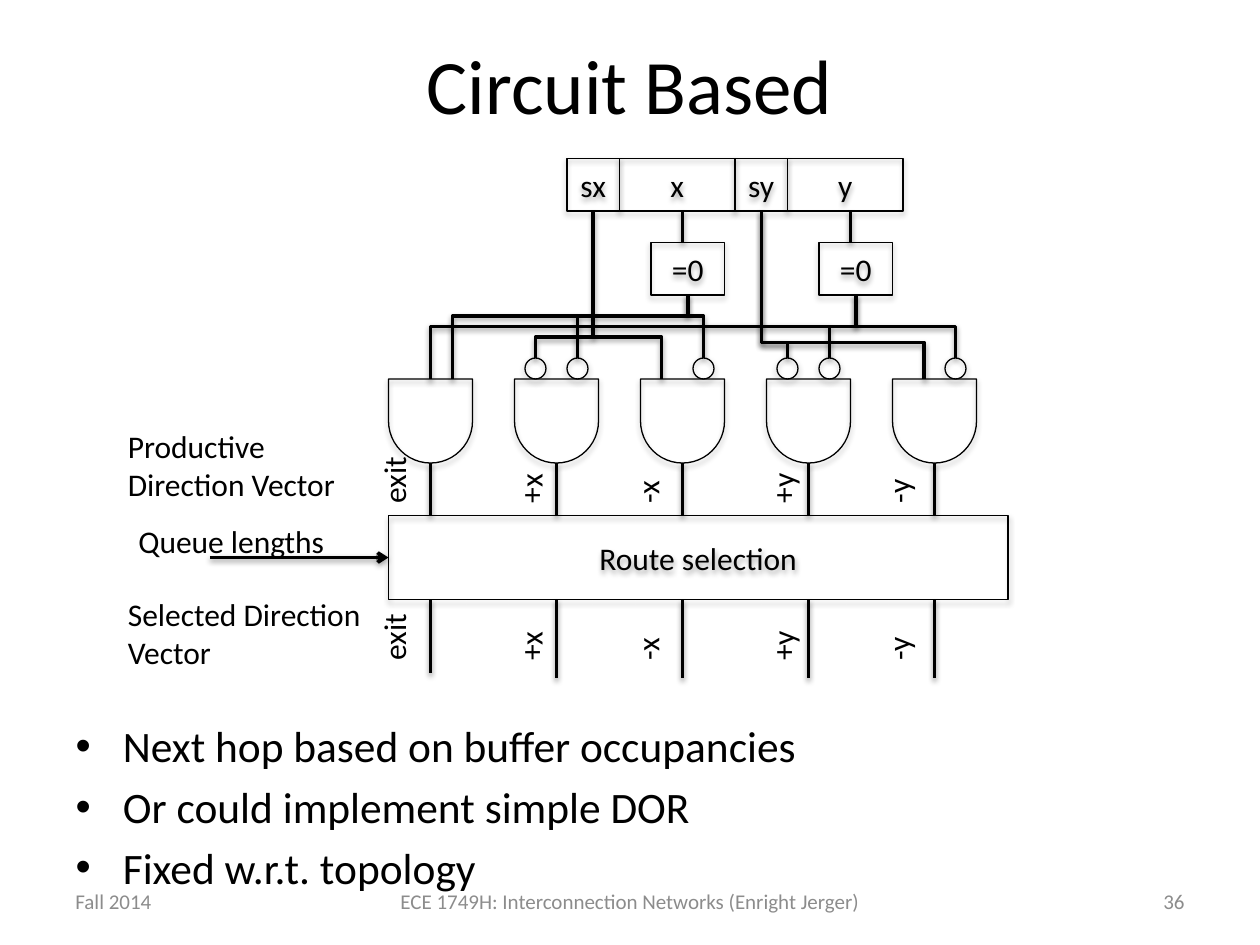
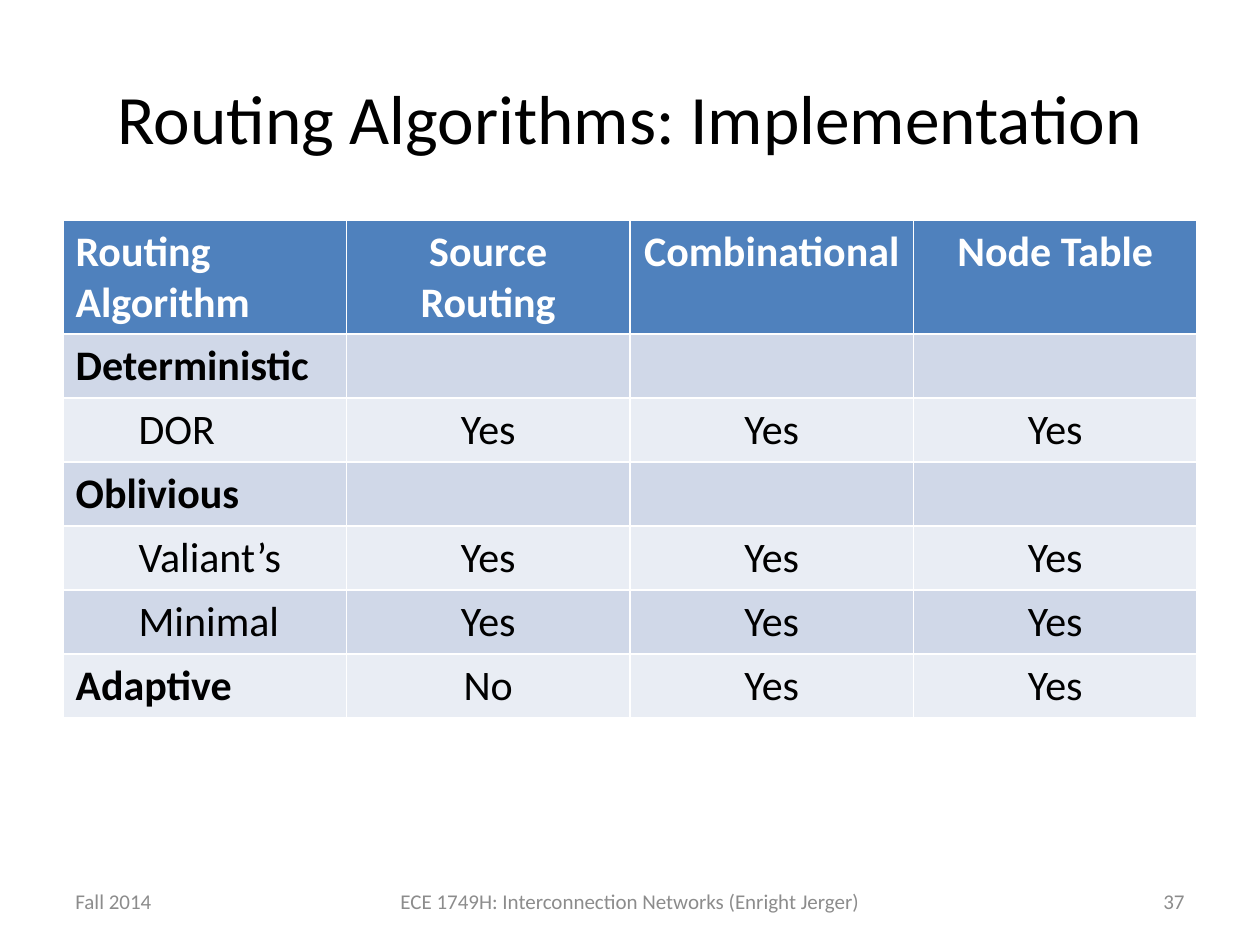
"""Builds two lecture slides on routing: a selection circuit and an implementation table."""
from lxml.etree import SubElement
from pptx import Presentation
from pptx.dml.color import RGBColor
from pptx.enum.shapes import MSO_CONNECTOR as Wire, MSO_SHAPE as Shape
from pptx.enum.text import MSO_ANCHOR as Anchor, MSO_AUTO_SIZE as AutoSize, PP_ALIGN as Align
from pptx.oxml.ns import qn
from pptx.util import Emu, Pt

PX = 7620
FONT = "Calibri"
BLACK = RGBColor(0x00, 0x00, 0x00)
WHITE = RGBColor(0xFF, 0xFF, 0xFF)
GREY = RGBColor(0x8C, 0x8C, 0x8C)
HEADER_BLUE = RGBColor(0x4F, 0x81, 0xBD)
BAND_DARK = RGBColor(0xD0, 0xD8, 0xE8)
BAND_LIGHT = RGBColor(0xE9, 0xED, 0xF4)
TITLE_AND_BODY, TITLE_ONLY = 1, 5


def px(*lengths):
    return [Emu(round(length * PX)) for length in lengths]


class Deck:
    """Holds the lecture style and the slide being drawn."""

    def __init__(self):
        self.presentation = Presentation()
        self.presentation.slide_width, self.presentation.slide_height = px(1200, 900)

    def new_slide(self, layout, title, number, top, size):
        self.slide = self.presentation.slides.add_slide(self.presentation.slide_layouts[layout])
        self.fill_placeholder(0, [title], (60, top, 1080, 150), size)
        for text, left, width, align in (
            ("Fall 2014", 60, 280, Align.LEFT),
            ("ECE 1749H: Interconnection Networks (Enright Jerger)", 340, 520, Align.CENTER),
            (str(number), 860, 280, Align.RIGHT),
        ):
            self.label(text, (left, 834, width, 48), 12, GREY, align, Anchor.MIDDLE)

    def format(self, paragraph, size, color=BLACK, align=None, bold=None):
        paragraph.alignment = align
        for run in paragraph.runs:
            font = run.font
            font.name, font.size, font.bold = FONT, Pt(size), bold
            font.color.rgb = color

    def fill_placeholder(self, index, lines, box, size):
        holder = self.slide.placeholders[index]
        holder.left, holder.top, holder.width, holder.height = px(*box)
        frame = holder.text_frame
        frame.text = "\n".join(lines)
        frame.auto_size = AutoSize.NONE
        for position, paragraph in enumerate(frame.paragraphs):
            paragraph.space_before = Pt(5 if position else 0)
            self.format(paragraph, size)

    def label(self, text, box, size=18, color=BLACK, align=Align.LEFT, anchor=Anchor.TOP, rotation=0):
        holder = self.slide.shapes.add_textbox(*px(*box))
        holder.rotation = rotation
        frame = holder.text_frame
        frame.word_wrap = True
        frame.vertical_anchor = anchor
        if rotation:
            frame.margin_right = 0
        frame.text = text
        self.format(frame.paragraphs[0], size, color, align)

    def shade(self, item, opacity, distance):
        effects = SubElement(item._element.spPr, qn("a:effectLst"))
        shadow = SubElement(effects, qn("a:outerShdw"), blurRad="40000", dist=str(distance),
                            dir="5400000", rotWithShape="0")
        color = SubElement(shadow, qn("a:srgbClr"), val=str(BLACK))
        SubElement(color, qn("a:alpha"), val=str(opacity * 1000))

    def block(self, kind, box, text="", rotation=0):
        block = self.slide.shapes.add_shape(kind, *px(*box))
        block.rotation = rotation
        block.fill.background()
        block.line.color.rgb = BLACK
        block.line.width = Pt(0.75)
        self.shade(block, 35, 23000)
        if text:
            frame = block.text_frame
            frame.text = text
            frame.vertical_anchor = Anchor.MIDDLE
            self.format(frame.paragraphs[0], 18, align=Align.CENTER)

    def wire(self, start, end, kind=Wire.STRAIGHT, arrow=False):
        wire = self.slide.shapes.add_connector(kind, *px(*start, *end))
        wire.line.color.rgb = BLACK
        wire.line.width = Pt(2)
        if arrow:
            SubElement(wire._element.spPr.find(qn("a:ln")), qn("a:tailEnd"), type="arrow")
        self.shade(wire, 38, 20000)
        return wire

    def bend(self, wire, share):
        guides = wire._element.spPr.find(qn("a:prstGeom")).find(qn("a:avLst"))
        for guide in list(guides):
            guides.remove(guide)
        SubElement(guides, qn("a:gd"), name="adj1", fmla=f"val {round(share * 100000)}")

    def drop(self, start, end):
        """Runs sideways from start, then straight down to end."""
        self.bend(self.wire(start, end, Wire.ELBOW), 1)

    def tap(self, start, end, bus):
        """Runs down to the bus height, sideways, and down again to end."""
        (x1, y1), (x2, y2) = start, end
        length, offset = y2 - y1, abs(x2 - x1)
        left, top = (x1 + x2 - length) / 2, (y1 + y2 - offset) / 2
        right, bottom = left + length, top + offset
        rightward = x2 > x1
        begin, finish = (right, left) if rightward else (left, right)
        wire = self.wire((begin, top), (finish, bottom), Wire.ELBOW)
        wire._element.spPr.find(qn("a:xfrm")).set("rot", str((270 if rightward else 90) * 60000))
        self.bend(wire, (bus - y1) / length)

    def table(self, rows, box, header_height, row_height):
        left, top, width = box
        height = header_height + row_height * (len(rows) - 1)
        table = self.slide.shapes.add_table(len(rows), len(rows[0]),
                                            *px(left, top, width, height)).table
        for r, values in enumerate(rows):
            table.rows[r].height = px(row_height if r else header_height)[0]
            for c, value in enumerate(values):
                self.cell(table.cell(r, c), value, r, c, grouped=values[0] in ROUTING_CLASSES)

    def cell(self, cell, value, row, column, grouped):
        cell.fill.solid()
        cell.fill.fore_color.rgb = (BAND_DARK if row % 2 else BAND_LIGHT) if row else HEADER_BLUE
        cell.text = value
        paragraph = cell.text_frame.paragraphs[0]
        if row and not column and not grouped:
            paragraph.level = 1
            paragraph._p.get_or_add_pPr().set("marL", str(60 * PX))
        self.format(paragraph, 24, BLACK if row else WHITE,
                    Align.CENTER if column else Align.LEFT,
                    not row or (grouped and not column))


ROUTING_CLASSES = ("Deterministic", "Oblivious", "Adaptive")
ROUTING_ROWS = (
    ("Routing Algorithm", "Source Routing", "Combinational", "Node Table"),
    ("Deterministic", "", "", ""),
    ("DOR", "Yes", "Yes", "Yes"),
    ("Oblivious", "", "", ""),
    ("Valiant’s", "Yes", "Yes", "Yes"),
    ("Minimal", "Yes", "Yes", "Yes"),
    ("Adaptive", "No", "Yes", "Yes"),
)
DIRECTIONS = (("exit", 340), ("+x", 470), ("-x", 581), ("+y", 710), ("-y", 820))
REGISTER_TOP, ZERO_TOP, BUBBLE_TOP, GATE_TOP, ROUTE_TOP = 151, 231, 341, 361, 491
FIELD_HEIGHT, GATE_SIZE, BUBBLE_SIZE = 50, 80, 20
REGISTER_END, ZERO_END = REGISTER_TOP + FIELD_HEIGHT, ZERO_TOP + FIELD_HEIGHT
GATE_END, ROUTE_END = GATE_TOP + GATE_SIZE, ROUTE_TOP + GATE_SIZE
X_ZERO_BUS, Y_ZERO_BUS, X_SIGN_BUS, Y_SIGN_BUS = 301, 311, 321, 326


def draw_circuit(deck):
    for axis, left in (("x", 540), ("y", 700)):
        deck.block(Shape.RECTANGLE, (left, REGISTER_TOP, 50, FIELD_HEIGHT), "s" + axis)
        deck.block(Shape.RECTANGLE, (left + 50, REGISTER_TOP, 110, FIELD_HEIGHT), axis)
        deck.block(Shape.RECTANGLE, (left + 80, ZERO_TOP, 70, FIELD_HEIGHT), "=0")
        deck.wire((left + 110, REGISTER_END), (left + 110, ZERO_TOP))

    for center in (510, 550, 670, 750, 790, 910):
        deck.block(Shape.OVAL, (center - 10, BUBBLE_TOP, BUBBLE_SIZE, BUBBLE_SIZE))

    x_sign, y_sign = (565, REGISTER_END), (725, REGISTER_END)
    x_zero, y_zero = (655, ZERO_END), (815, ZERO_END)
    for source, bus, target in (
        (x_sign, X_SIGN_BUS, 510), (x_zero, X_ZERO_BUS, 670), (x_zero, X_ZERO_BUS, 550),
        (y_zero, Y_ZERO_BUS, 790), (y_zero, Y_ZERO_BUS, 910), (y_sign, Y_SIGN_BUS, 750),
    ):
        deck.tap(source, (target, BUBBLE_TOP), bus)
    deck.tap(y_sign, (880, GATE_TOP), Y_SIGN_BUS)
    for corner, bus, target in ((565, X_SIGN_BUS, 630), (550, X_ZERO_BUS, 431), (790, Y_ZERO_BUS, 410)):
        deck.drop((corner, bus), (target, GATE_TOP))

    deck.block(Shape.RECTANGLE, (370, ROUTE_TOP, 590, GATE_SIZE), "Route selection")
    for index, (direction, label_left) in enumerate(DIRECTIONS):
        gate_left = 370 + 120 * index
        center = gate_left + GATE_SIZE // 2
        deck.block(Shape.FLOWCHART_DELAY, (gate_left, GATE_TOP, GATE_SIZE, GATE_SIZE), rotation=90)
        deck.wire((center, GATE_END), (center, ROUTE_TOP))
        deck.wire((center, ROUTE_END), (center, 646 if index else 641))
        for label_top in (432, 582):
            deck.label(direction, (label_left, label_top, 70, 48), rotation=270)

    deck.wire((200, 531), (370, 531), arrow=True)
    deck.label("Productive Direction Vector", (110, 401, 260, 85))
    deck.label("Queue lengths", (120, 491, 310, 48))
    deck.label("Selected Direction Vector", (110, 561, 260, 85))


def main():
    deck = Deck()
    deck.new_slide(TITLE_AND_BODY, "Circuit Based", 36, 5, 44)
    deck.fill_placeholder(1, ("Next hop based on buffer occupancies", "Or could implement simple DOR",
                              "Fixed w.r.t. topology"), (60, 679, 1080, 161), 24.8)
    draw_circuit(deck)

    deck.new_slide(TITLE_ONLY, "Routing Algorithms: Implementation", 37, 36, 39.6)
    deck.table(ROUTING_ROWS, (60, 210, 1080), 108, 61)
    deck.presentation.save("out.pptx")


if __name__ == "__main__":
    main()
